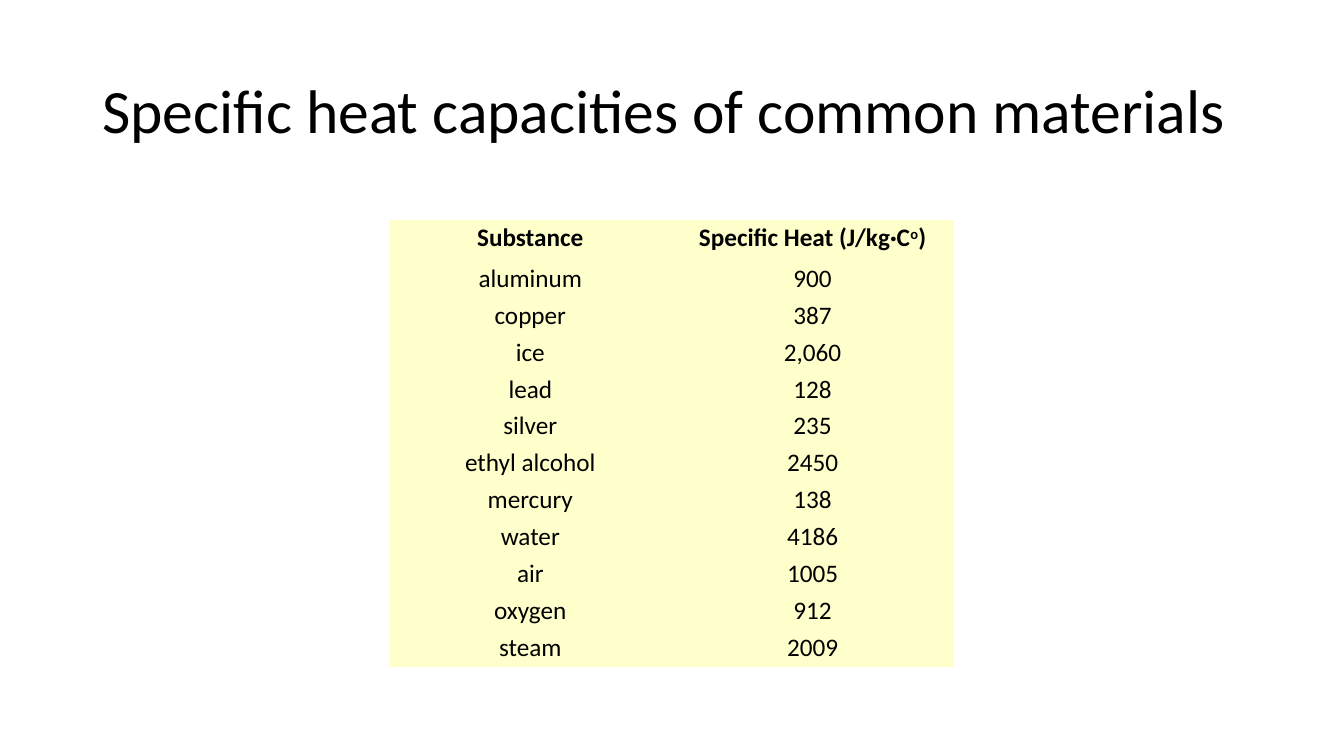
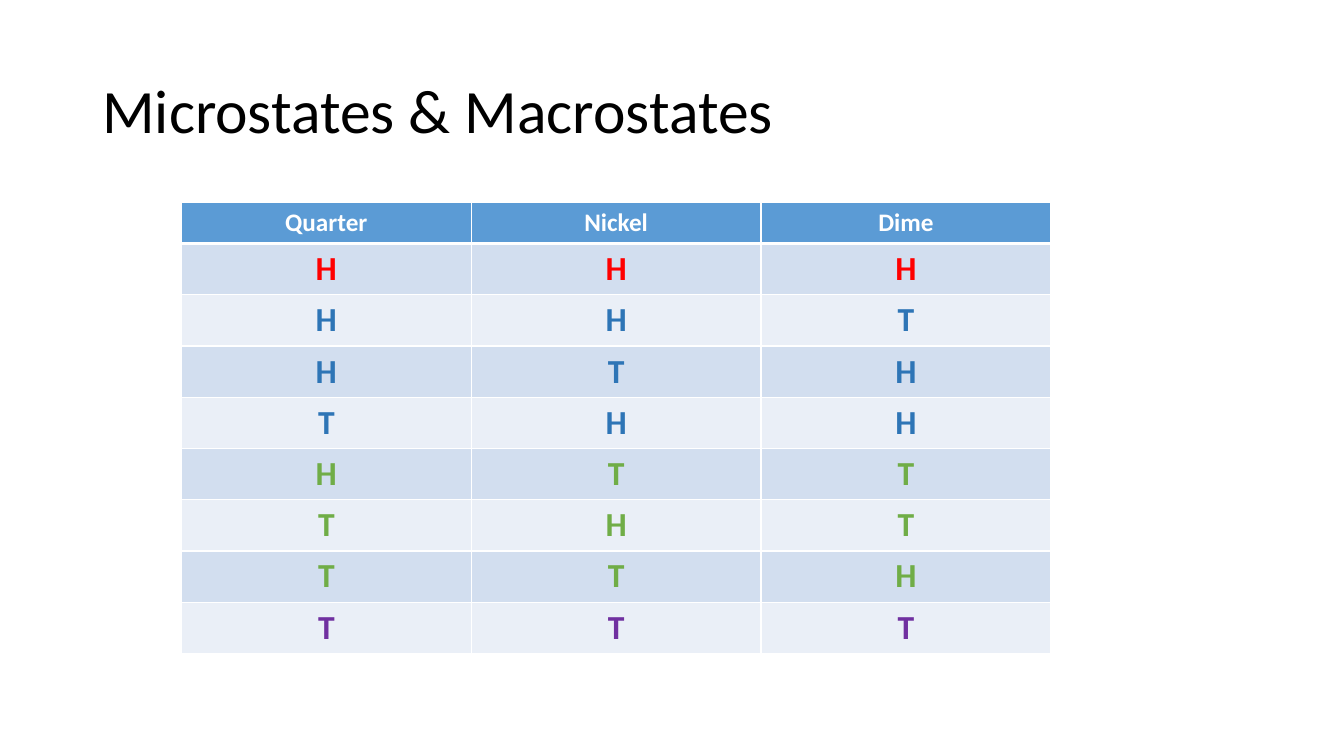
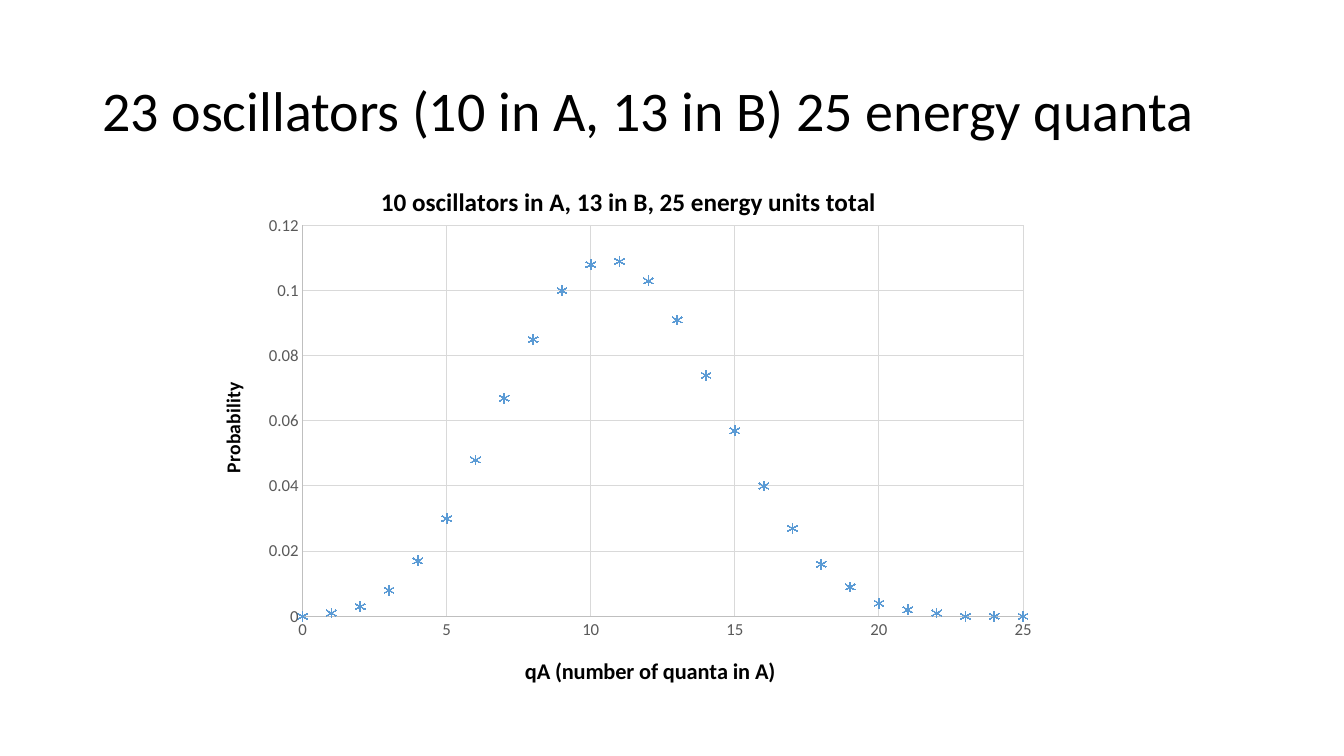
from lxml import etree
from pptx import Presentation
from pptx.chart.data import XyChartData
from pptx.dml.color import RGBColor
from pptx.enum import chart as ch, text
from pptx.oxml import parse_xml
from pptx.oxml.ns import nsdecls, qn
from pptx.util import Pt

FONT = "Calibri"
NO_STYLE = "{2D5ABB26-0587-4C30-8999-92F81FD0307C}"
C = {
    "black": "000000", "white": "FFFFFF", "cream": "FFFFCC",
    "header": "5B9BD5", "band_dark": "D2DEEF", "band_light": "EAEFF7",
    "red": "FF0000", "blue": "2E75B6", "green": "70AD47", "purple": "7030A0",
    "label": "595959", "axis": "BFBFBF", "grid": "D9D9D9",
}

HEAT_TITLE = "Specific heat capacities of common materials"
HEAT_HEADER = ("Substance", "Specific Heat (J/kg·C^o^)")  # ^...^ is superscript
HEATS = [
    ("aluminum", "900"), ("copper", "387"), ("ice", "2,060"),
    ("lead", "128"), ("silver", "235"), ("ethyl alcohol", "2450"),
    ("mercury", "138"), ("water", "4186"), ("air", "1005"),
    ("oxygen", "912"), ("steam", "2009"),
]

COIN_TITLE = "Microstates & Macrostates"
COINS = ("Quarter", "Nickel", "Dime")
MACROSTATES = [
    ("red", ["HHH"]),
    ("blue", ["HHT", "HTH", "THH"]),
    ("green", ["HTT", "THT", "TTH"]),
    ("purple", ["TTT"]),
]

OSCILLATOR_TITLE = "23 oscillators (10 in A, 13 in B) 25 energy quanta"
CHART_TITLE = "10 oscillators in A, 13 in B, 25 energy units total"
X_TITLE, Y_TITLE = "qA (number of quanta in A)", "Probability"
PROBABILITIES = [
    0, 0.001, 0.003, 0.008, 0.017, 0.03, 0.048, 0.067, 0.085, 0.1, 0.108,
    0.109, 0.103, 0.091, 0.074, 0.057, 0.04, 0.027, 0.016, 0.009, 0.004,
    0.002, 0.001, 0, 0, 0,
]
PLOT = {"x": 0.12, "y": 0.11, "w": 0.84, "h": 0.69}


def rgb(name):
    return RGBColor.from_string(C[name])


def set_font(font, size, color="black", bold=False):
    font.name, font.size, font.bold = FONT, Pt(size), bold
    font.color.rgb = rgb(color)


def add_titled_slide(prs, title, size=44):
    s = prs.slides.add_slide(prs.slide_layouts[6])
    tf = s.shapes.add_textbox(Pt(66), Pt(28.8), Pt(828), Pt(104.4)).text_frame
    tf.word_wrap = True
    tf.vertical_anchor = text.MSO_ANCHOR.MIDDLE
    p = tf.paragraphs[0]
    p.text, p.line_spacing = title, 0.9
    set_font(p.font, size)
    return s


def add_plain_table(s, left, top, col_width, heights, columns):
    """Add a table without style or grid."""
    table = s.shapes.add_table(len(heights), columns, Pt(left), Pt(top),
                               Pt(col_width * columns), Pt(sum(heights))).table
    table._tbl.tblPr.find(qn("a:tableStyleId")).text = NO_STYLE
    for col in table.columns:
        col.width = Pt(col_width)
    for row, height in zip(table.rows, heights):
        row.height = Pt(height)
    return table


def fill_cell(cell, content, fill, size, color="black", bold=False):
    cell.fill.solid()
    cell.fill.fore_color.rgb = rgb(fill)
    p = cell.text_frame.paragraphs[0]
    p.alignment = text.PP_ALIGN.CENTER
    set_font(p.font, size, color, bold)
    for i, part in enumerate(content.split("^")):
        r = p.add_run()
        r.text = part
        if i % 2:
            r.font._element.set("baseline", "30000")


def set_borders(cell, top, bottom):
    """Draw white cell borders, 1 pt at the sides."""
    widths = {"lnL": 1, "lnR": 1, "lnT": top, "lnB": bottom}
    for i, (tag, width) in enumerate(widths.items()):
        cell._tc.get_or_add_tcPr().insert(i, parse_xml(
            f'<a:{tag} {nsdecls("a")} w="{Pt(width)}"><a:solidFill>'
            f'<a:srgbClr val="{C["white"]}"/></a:solidFill></a:{tag}>'))


def build_heat_slide(prs):
    s = add_titled_slide(prs, HEAT_TITLE)
    table = add_plain_table(s, 278, 157, 201.6, [28.8] + [26.4] * len(HEATS), 2)
    for i, row in enumerate([HEAT_HEADER] + HEATS):
        for j, content in enumerate(row):
            cell = table.cell(i, j)
            cell.margin_left = cell.margin_right = Pt(2.16)
            cell.margin_top = cell.margin_bottom = Pt(2.16)
            fill_cell(cell, content, "cream", 18, bold=i == 0)


def build_coin_slide(prs):
    s = add_titled_slide(prs, COIN_TITLE)
    rows = [(COINS, "white")]
    rows += [(state, color) for color, states in MACROSTATES for state in states]
    heights = [29.2] + [36.6] * (len(rows) - 1)
    table = add_plain_table(s, 129.6, 144.8, 207, heights, len(COINS))
    for i, (row, color) in enumerate(rows):
        fill = "header" if i == 0 else ("band_light", "band_dark")[i % 2]
        for j, content in enumerate(row):
            cell = table.cell(i, j)
            fill_cell(cell, content, fill, 24 if i else 18, color, bold=True)
            set_borders(cell, 3 if i == 1 else 1, 3 if i == 0 else 1)


def set_title(owner, content, size):
    """Give a chart or an axis a bold title."""
    p = (owner.chart_title if hasattr(owner, "chart_title")
         else owner.axis_title).text_frame.paragraphs[0]
    r = p.add_run()
    r.text = content
    set_font(r.font, size, bold=True)


def style_axis(axis, title, size, maximum, step):
    set_title(axis, title, size)
    axis.minimum_scale, axis.maximum_scale, axis.major_unit = 0, maximum, step
    axis.major_tick_mark = axis.minor_tick_mark = ch.XL_TICK_MARK.NONE
    axis.has_major_gridlines = True
    set_font(axis.tick_labels.font, 12, "label")
    axis.tick_labels.number_format = "General"
    axis.tick_labels.number_format_is_linked = False
    for line, color in ((axis.format.line, "axis"),
                        (axis.major_gridlines.format.line, "grid")):
        line.color.rgb, line.width = rgb(color), Pt(0.75)


def place_plot(chart):
    """Fix the inner plot area as fractions of the chart."""
    area = chart._chartSpace.chart.plotArea
    for old in area.findall(qn("c:layout")):
        area.remove(old)
    layout = parse_xml(f'<c:layout {nsdecls("c")}><c:manualLayout/></c:layout>')
    settings = {"layoutTarget": "inner", "xMode": "edge", "yMode": "edge", **PLOT}
    for tag, value in settings.items():
        etree.SubElement(layout[0], qn(f"c:{tag}")).set("val", str(value))
    area.insert(0, layout)


def build_oscillator_slide(prs):
    s = add_titled_slide(prs, OSCILLATOR_TITLE, 40)
    data = XyChartData()
    points = data.add_series("Series 1")
    for quanta, probability in enumerate(PROBABILITIES):
        points.add_data_point(quanta, probability)
    chart = s.shapes.add_chart(ch.XL_CHART_TYPE.XY_SCATTER, Pt(142.6), Pt(116.6),
                               Pt(612.7), Pt(404.6), data).chart
    set_font(chart.font, 10)
    chart.has_legend = False
    set_title(chart, CHART_TITLE, 18)
    style_axis(chart.category_axis, X_TITLE, 16, 25, 5)
    style_axis(chart.value_axis, Y_TITLE, 14, 0.12, 0.02)
    place_plot(chart)
    chart.plots[0].vary_by_categories = False
    series = chart.plots[0].series[0]
    series.smooth = False
    series.format.line.fill.background()
    marker = series.marker
    marker.style, marker.size = ch.XL_MARKER_STYLE.STAR, 7
    marker.format.fill.solid()
    marker.format.fill.fore_color.rgb = rgb("header")
    marker.format.line.color.rgb = rgb("header")


def main():
    prs = Presentation()
    prs.slide_width, prs.slide_height = Pt(960), Pt(540)
    build_heat_slide(prs)
    build_coin_slide(prs)
    build_oscillator_slide(prs)
    prs.save("out.pptx")


if __name__ == "__main__":
    main()
